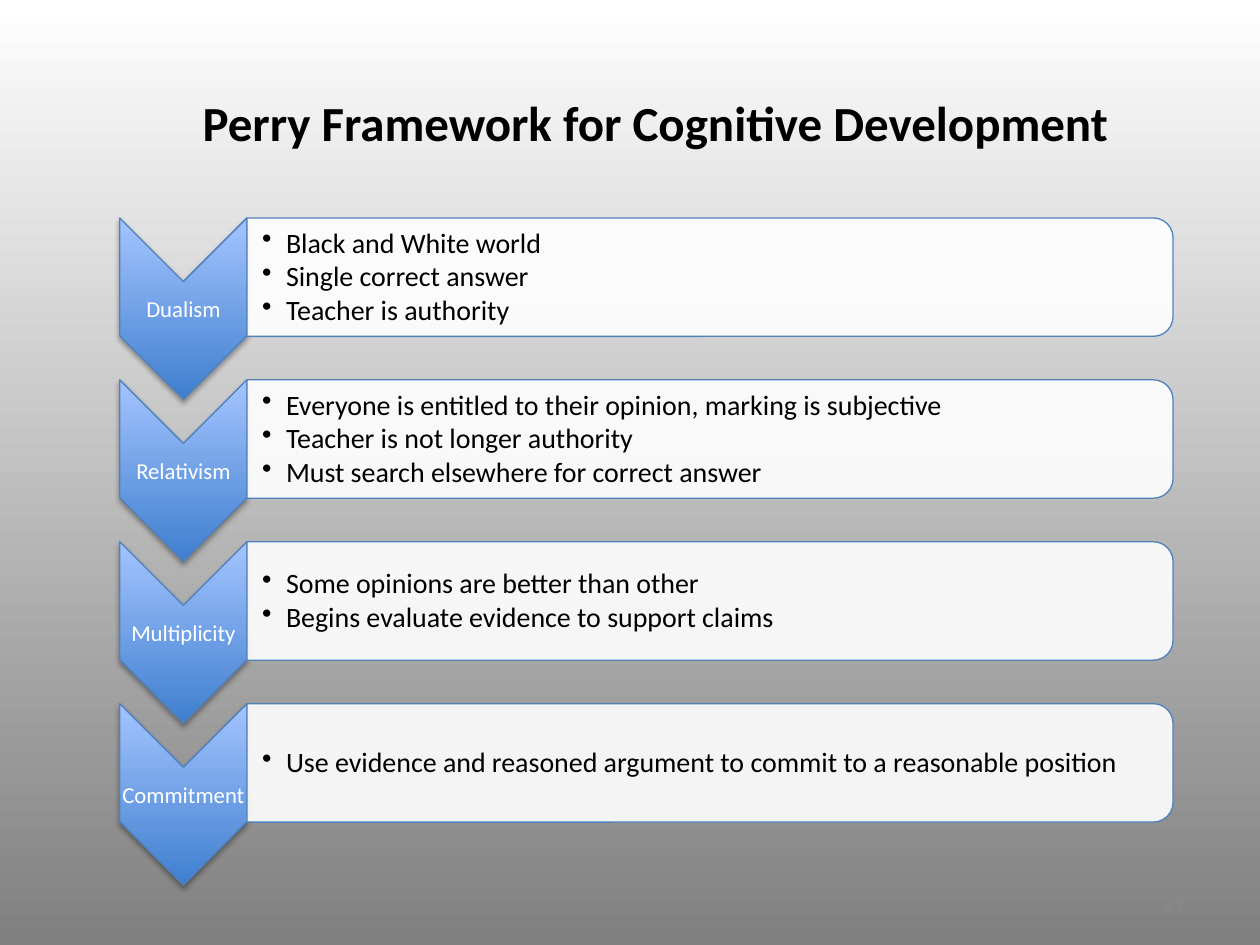
import pptx
import pptx.util
import pptx.dml.color
import pptx.enum.shapes
import pptx.enum.text
import pptx.oxml
import pptx.oxml.ns

Inches = pptx.util.Inches
Pt = pptx.util.Pt
SHAPE = pptx.enum.shapes.MSO_SHAPE
ALIGN = pptx.enum.text.PP_ALIGN
NS = pptx.oxml.ns.nsdecls("a")

STAGES = [
    ("Dualism", ["Black and White world", "Single correct answer",
                 "Teacher is authority"]),
    ("Relativism", ["Everyone is entitled to their opinion, marking is subjective",
                    "Teacher is not longer authority",
                    "Must search elsewhere for correct answer"]),
    ("Multiplicity", ["Some opinions are better than other",
                      "Begins evaluate evidence to support claims"]),
    ("Commitment", ["Use evidence and reasoned argument to commit to a reasonable position"]),
]


def color(code):
    return pptx.dml.color.RGBColor.from_string(code)


def blend(fill, first, last, angle):
    fill.gradient()
    fill.gradient_angle = angle
    for stop, code, place in zip(fill.gradient_stops, (first, last), (0, 1)):
        stop.color.rgb = color(code)
        stop.position = place


def write(slide, box, lines, size, code, align=ALIGN.CENTER, bold=False,
          left=0.01, bullet=False):
    frame = slide.shapes.add_textbox(*map(Inches, box)).text_frame
    frame.word_wrap = True
    frame.vertical_anchor = pptx.enum.text.MSO_ANCHOR.MIDDLE
    frame.margin_left = Inches(left)
    frame.margin_top = frame.margin_right = frame.margin_bottom = Inches(0.01)
    for i, line in enumerate(lines):
        para = frame.paragraphs[0] if i == 0 else frame.add_paragraph()
        para.alignment = align
        if bullet:
            para.line_spacing = 0.9
            para.space_after = Pt(2)
            props = para._p.get_or_add_pPr()
            props.set("marL", str(Inches(0.19)))
            props.set("indent", str(-Inches(0.19)))
            props.append(pptx.oxml.parse_xml(f'<a:buChar {NS} char="•"/>'))
        run = para.add_run()
        run.text = line
        run.font.name = "Calibri"
        run.font.size = Pt(size)
        run.font.bold = bold
        run.font.color.rgb = color(code)


def turned(slide, kind, x, y, wide, high):
    shape = slide.shapes.add_shape(
        kind, Inches(x + (wide - high) / 2), Inches(y + (high - wide) / 2),
        Inches(high), Inches(wide))
    shape.rotation = 90
    shape.shadow.inherit = False
    shape.line.color.rgb = color("4F81BD")
    shape.line.width = Pt(0.75)
    return shape


def arrow(slide, x, y, wide, high, name):
    shape = turned(slide, SHAPE.CHEVRON, x, y, wide, high)
    blend(shape.fill, "3F7FCE", "A4C4FF", 180)
    effects = shape._element.spPr.find(pptx.oxml.ns.qn("a:effectLst"))
    effects.append(pptx.oxml.parse_xml(
        f'<a:outerShdw {NS} blurRad="{Pt(3.1)}" dist="{Pt(1.8)}" '
        'dir="5400000" rotWithShape="0"><a:srgbClr val="000000">'
        '<a:alpha val="35000"/></a:srgbClr></a:outerShdw>'))
    write(slide, (x, y + wide / 2, wide, high - wide), [name], 13, "FFFFFF")


def panel(slide, x, y, wide, high, lines):
    shape = turned(slide, SHAPE.ROUND_2_SAME_RECTANGLE, x, y, wide, high)
    shape.fill.solid()
    shape.fill.fore_color.rgb = color("FFFFFF")
    tint = shape._element.spPr.find(".//" + pptx.oxml.ns.qn("a:srgbClr"))
    tint.append(pptx.oxml.parse_xml(f'<a:alpha {NS} val="90000"/>'))
    write(slide, (x, y + 0.05, wide - 0.04, high - 0.09), lines, 16, "000000",
          ALIGN.LEFT, left=0.12, bullet=True)


def stage(slide, x, y, wide, name, lines):
    tip = 1.01
    arrow(slide, x, y, tip, 1.44, name)
    panel(slide, x + tip, y, wide - tip, 0.94, lines)


def main():
    deck = pptx.Presentation()
    deck.slide_width = Inches(10)
    deck.slide_height = Inches(7.5)
    slide = deck.slides.add_slide(deck.slide_layouts[6])
    blend(slide.background.fill, "808080", "FFFFFF", 90)
    write(slide, (0.95, 0.16, 8.5, 1.61),
          ["Perry Framework for Cognitive Development"], 28, "000000", bold=True)
    for i, (name, lines) in enumerate(STAGES):
        stage(slide, 0.95, 1.73 + i * 1.285, 8.36, name, lines)
    write(slide, (7.17, 6.96, 2.24, 0.4), ["29"], 12, "898989", ALIGN.RIGHT)
    deck.save("out.pptx")


if __name__ == "__main__":
    main()
